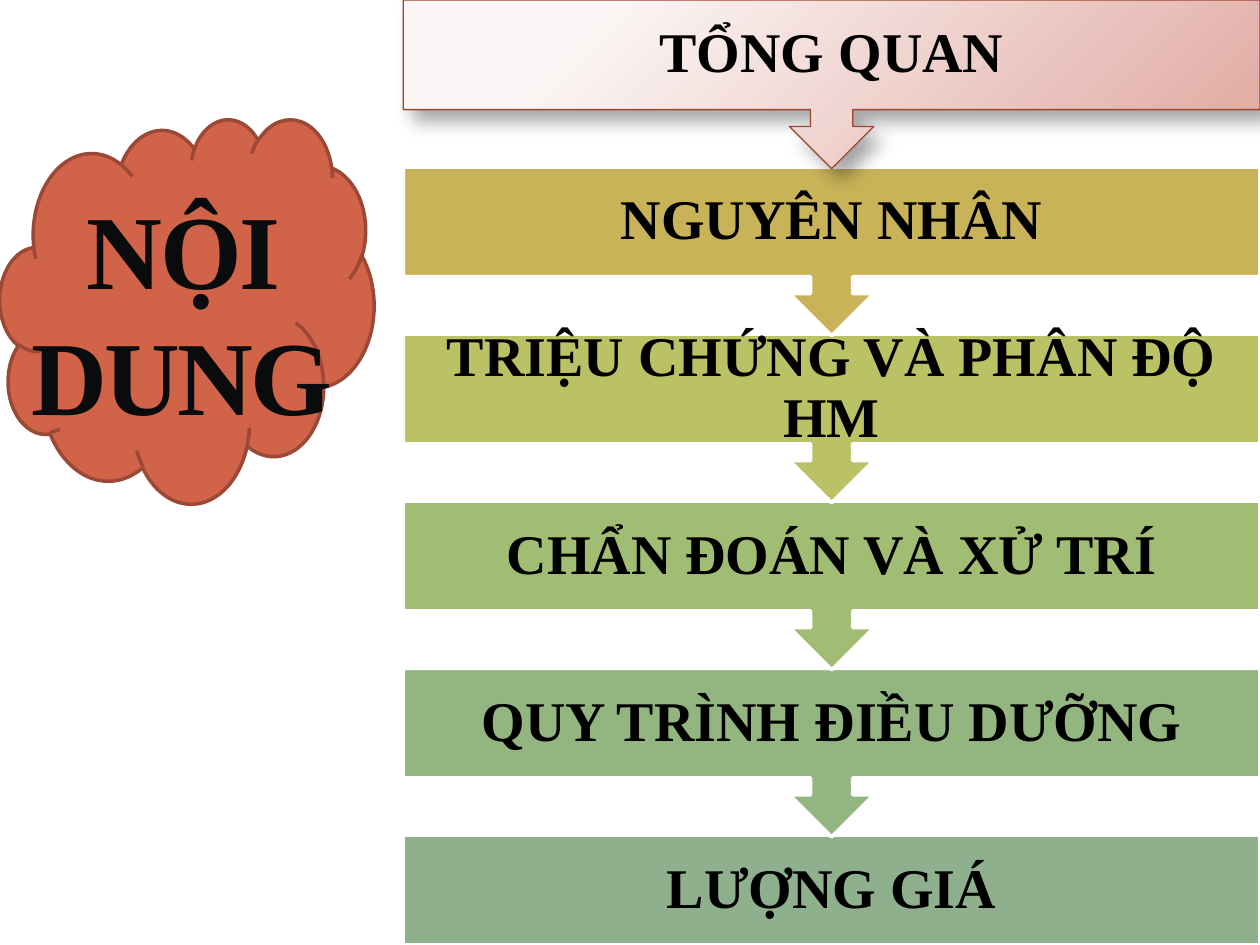
from dataclasses import dataclass

from lxml import etree
from pptx import Presentation
from pptx.dml.color import RGBColor
from pptx.enum.shapes import MSO_SHAPE
from pptx.enum.text import MSO_ANCHOR, PP_ALIGN
from pptx.oxml.ns import qn
from pptx.util import Cm, Pt

CLOUD, RECT = MSO_SHAPE.CLOUD, MSO_SHAPE.RECTANGLE
CALLOUT = MSO_SHAPE.UP_ARROW_CALLOUT
MIDDLE, CENTER = MSO_ANCHOR.MIDDLE, PP_ALIGN.CENTER


@dataclass(frozen=True)
class Theme:
    font: str = "Times New Roman"
    title_size: int = 60
    step_size: int = 32
    title: str = "0A0B0D"
    text: str = "000000"
    cloud: str = "D16349"
    cloud_line: str = "9B4936"
    step_line: str = "FFFFFF"
    first_line: str = "9D4530"
    gradient: tuple = ((0.2, "FBF6F5"), (1, "E0A79F"))


THEME = Theme()

# Step label and fill; None takes the theme gradient
STEPS = [
    ("TỔNG QUAN", None),
    ("NGUYÊN NHÂN", "C9B358"),
    ("TRIỆU CHỨNG VÀ PHÂN ĐỘ HM", "BBC265"),
    ("CHẨN ĐOÁN VÀ XỬ TRÍ", "A1BC73"),
    ("QUY TRÌNH ĐIỀU DƯỠNG", "93B580"),
    ("LƯỢNG GIÁ", "8FB08C"),
]


def add_shape(shapes, kind, box, fill, line, width):
    sp = shapes.add_shape(kind, *map(Cm, box))
    sp.shadow.inherit = False
    if fill:
        sp.fill.solid()
        sp.fill.fore_color.rgb = RGBColor.from_string(fill)
    sp.line.color.rgb = RGBColor.from_string(line)
    sp.line.width = Pt(width)
    return sp


def add_label(shapes, box, text, size, color, inset):
    tb = shapes.add_textbox(*map(Cm, box))
    tf = tb.text_frame
    tf.word_wrap = True
    tf.vertical_anchor = MIDDLE
    tf.margin_left = tf.margin_right = Cm(inset)
    tf.margin_top = tf.margin_bottom = Cm(inset)
    p = tf.paragraphs[0]
    p.alignment = CENTER
    r = p.add_run()
    r.text = text
    r.font.name = THEME.font
    r.font.size = Pt(size)
    r.font.bold = True
    r.font.color.rgb = RGBColor.from_string(color)
    return p


def style_first_step(sp):
    """Radial gradient from the top left corner, and a soft shadow."""
    sp.fill.gradient()
    for stop, (position, color) in zip(sp.fill.gradient_stops, THEME.gradient):
        stop.position = position
        stop.color.rgb = RGBColor.from_string(color)
    grad = sp._element.spPr.find(qn("a:gradFill"))
    grad.set("rotWithShape", "0")
    grad.remove(grad.find(qn("a:lin")))
    path = etree.SubElement(grad, qn("a:path"), path="circle")
    etree.SubElement(path, qn("a:fillToRect"),
                     l="-15000", t="-15000", r="115000", b="115000")

    effects = sp._element.spPr.find(qn("a:effectLst"))
    shadow = etree.SubElement(
        effects, qn("a:outerShdw"), blurRad=str(Pt(10.2)), dist=str(Pt(8)),
        dir=str(45 * 60000), rotWithShape="0")
    black = etree.SubElement(shadow, qn("a:srgbClr"), val="000000")
    etree.SubElement(black, qn("a:alpha"), val="35000")


def add_heading(slide, left, top, width, height):
    # Cloud with the slide heading over it
    add_shape(slide.shapes, CLOUD, (left, top, width, height),
              THEME.cloud, THEME.cloud_line, 2)
    p = add_label(slide.shapes, (left, top, width - 0.2, height), "NỘI DUNG",
                  THEME.title_size, THEME.title, 0.25)
    p.runs[0].font._element.set("spc", "-150")


def add_flow(slide, left, top, width, height):
    # Stack of callouts pointing down; the last step is a plain bar
    shapes = slide.shapes.add_group_shape().shapes
    callout_h, bar_h = 3.4, 2.21
    last = len(STEPS) - 1
    pitch = (height - bar_h) / last
    # Bottom step first, so that each arrow lies over the step below it
    for i, (text, fill) in reversed(list(enumerate(STEPS))):
        y = top + i * pitch
        bar = (left, y, width, bar_h)
        if i == last:
            add_shape(shapes, RECT, bar, fill, THEME.step_line, 2)
        else:
            line, weight = (THEME.step_line, 2) if fill else (THEME.first_line, 0.75)
            sp = add_shape(shapes, CALLOUT, (left, y, width, callout_h),
                           fill, line, weight)
            sp.rotation = 180
            if not fill:
                style_first_step(sp)
        p = add_label(shapes, bar, text, THEME.step_size, THEME.text, 0.63)
        p.line_spacing = 0.9


def main():
    prs = Presentation()
    prs.slide_width, prs.slide_height = Cm(25.4), Cm(19.05)
    slide = prs.slides.add_slide(prs.slide_layouts[6])
    add_heading(slide, 0, 2.39, 7.54, 7.75)
    add_flow(slide, 8.13, 0, 17.27, 19.05)
    prs.save("out.pptx")


if __name__ == "__main__":
    main()
